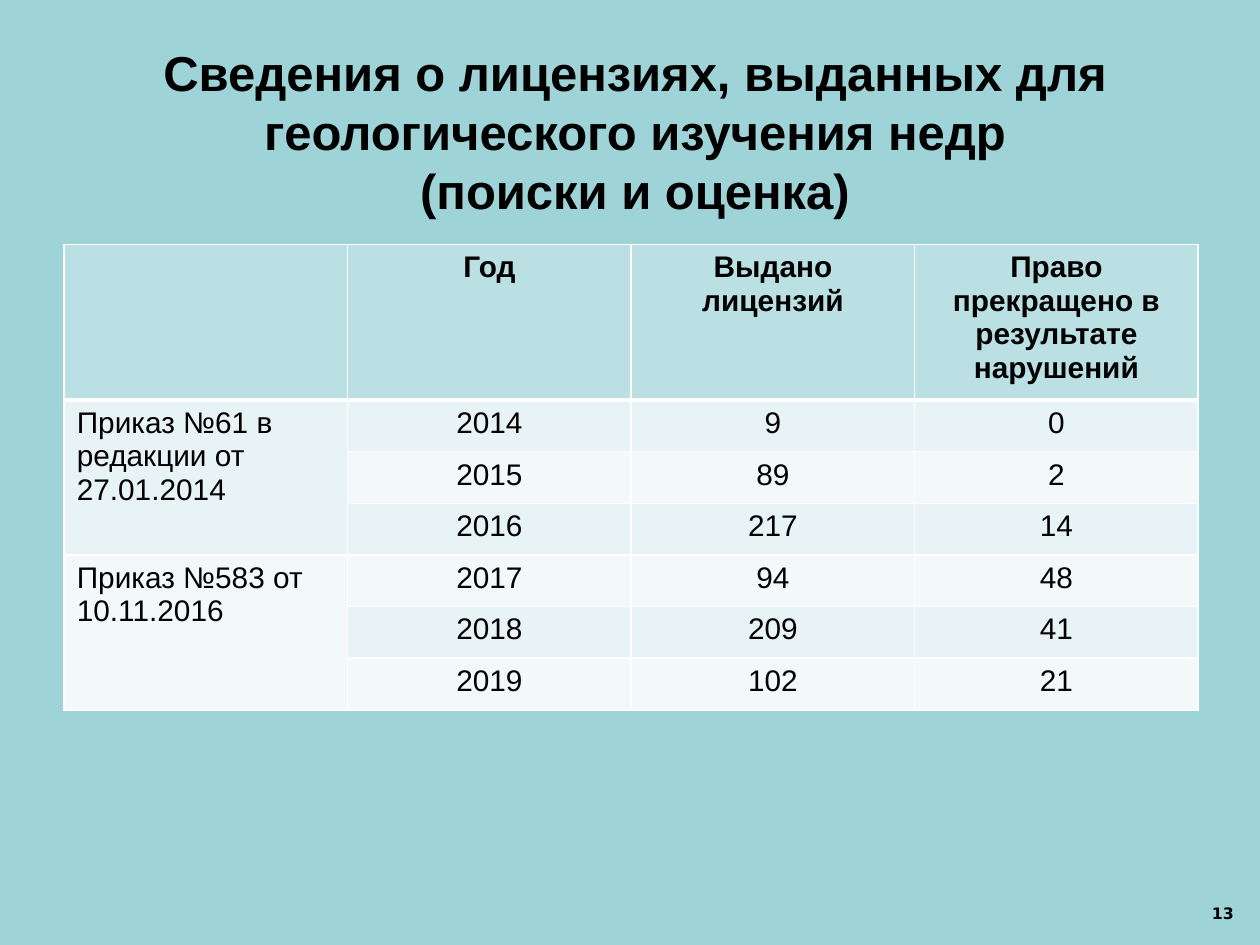
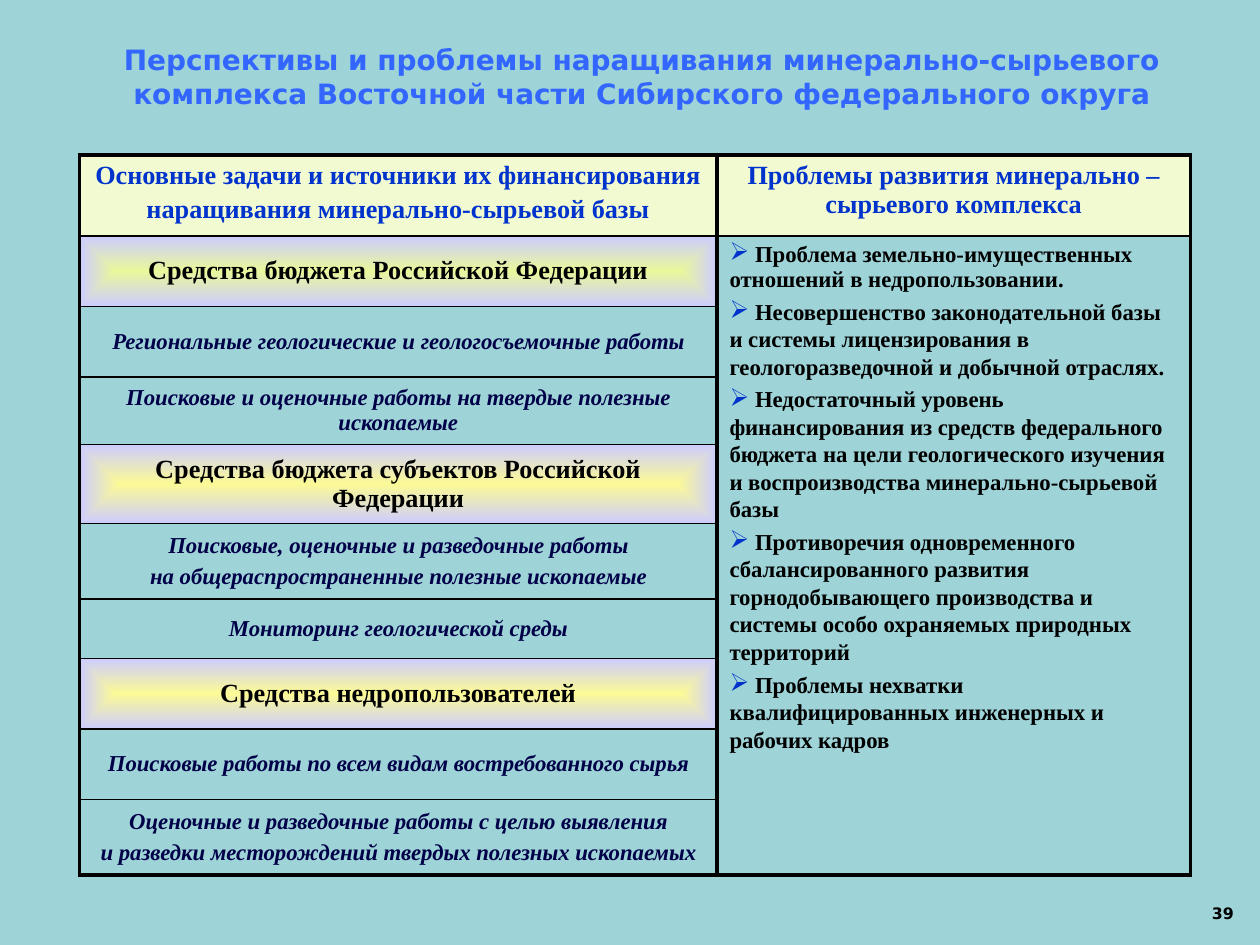
import lxml.etree
import pptx
import pptx.dml.color
import pptx.enum.text
import pptx.oxml.ns
import pptx.util

Inches = pptx.util.Inches
Pt = pptx.util.Pt
qn = pptx.oxml.ns.qn
ALIGN = pptx.enum.text.PP_ALIGN
ANCHOR = pptx.enum.text.MSO_ANCHOR


class Theme:
    background = "9ED3D7"
    black = "000000"
    white = "FFFFFF"
    header_fill = "BBE0E3"
    band_fills = ("E7F3F4", "F3F9FA")
    title_blue = "3366FF"
    heading_blue = "0033CC"
    heading_fill = "F2FAD2"
    task_navy = "000048"
    glow_edge = "CCCCFF"
    sans = "Arial"
    wide = "DejaVu Sans"
    serif = "Times New Roman"
    number_size = 9
    task_size = 13
    heading_size = 15
    small_title_size = 16
    licence_size = 17
    large_title_size = 28
    thin, medium, thick = 1, 2.25, 3


def write_text(frame, lines, font, size, color, bold=True, italic=False,
               align=ALIGN.CENTER, before=0, spacing=None, bullet=None):
    frame.word_wrap = True
    for index, line in enumerate(lines):
        para = frame.paragraphs[0] if index == 0 else frame.add_paragraph()
        para.text = line
        para.alignment = align
        para.space_before = Pt(before)
        if spacing and index:
            para.line_spacing = spacing
        if bullet:
            properties = para._p.get_or_add_pPr()
            properties.set("marL", "0")
            properties.set("indent", "0")
            bullet_color = lxml.etree.SubElement(properties, qn("a:buClr"))
            lxml.etree.SubElement(bullet_color, qn("a:srgbClr"), val=Theme.heading_blue)
            lxml.etree.SubElement(properties, qn("a:buSzPct"), val="110000")
            lxml.etree.SubElement(properties, qn("a:buChar"), char=bullet)
        para.font.name = font
        para.font.size = Pt(size)
        para.font.bold = bold
        para.font.italic = italic
        para.font.color.rgb = pptx.dml.color.RGBColor.from_string(color)


def style_cell(cell, line_color, widths, fill=None, glow=None):
    """Widths run left, right, top, bottom; glow is the centre of a gradient."""
    properties = cell._tc.get_or_add_tcPr()
    for side, width in zip("LRTB", widths):
        line = lxml.etree.SubElement(properties, qn("a:ln" + side), w=str(Pt(width)))
        solid = lxml.etree.SubElement(line, qn("a:solidFill"))
        lxml.etree.SubElement(solid, qn("a:srgbClr"), val=line_color)
    if glow:
        gradient = lxml.etree.SubElement(properties, qn("a:gradFill"), rotWithShape="1")
        stops = lxml.etree.SubElement(gradient, qn("a:gsLst"))
        for position, color in (("0", glow), ("100000", Theme.glow_edge)):
            stop = lxml.etree.SubElement(stops, qn("a:gs"), pos=position)
            lxml.etree.SubElement(stop, qn("a:srgbClr"), val=color)
        shade = lxml.etree.SubElement(gradient, qn("a:path"), path="shape")
        lxml.etree.SubElement(shade, qn("a:fillToRect"),
                              dict.fromkeys("ltrb", "50000"))
    elif fill:
        cell.fill.solid()
        cell.fill.fore_color.rgb = pptx.dml.color.RGBColor.from_string(fill)
    else:
        cell.fill.background()


deck = pptx.Presentation()
deck.slide_width = Inches(10)
deck.slide_height = Inches(7.5)

# Shared frame: background, title, page number and an empty table
page_plans = [
    dict(number="13", title_at=(0.59, 0.29, 8.9, 1.51), anchor=ANCHOR.TOP,
         title=["Сведения о лицензиях, выданных для геологического изучения недр",
                "(поиски и оценка)"],
         title_style=(Theme.sans, Theme.large_title_size, Theme.black),
         table_at=(0.51, 1.94), columns=[2.25] * 4, rows=[1.22] + [0.41] * 6),
    dict(number="39", title_at=(0.19, 0.13, 9.81, 0.95), anchor=ANCHOR.MIDDLE,
         title=["Перспективы и проблемы наращивания минерально-сырьевого комплекса "
                "Восточной части Сибирского федерального округа"],
         title_style=(Theme.wide, Theme.small_title_size, Theme.title_blue),
         table_at=(0.63, 1.23), columns=[5.06, 3.76],
         rows=[0.6, 0.56, 0.56, 0.53, 0.63, 0.6, 0.47, 0.56, 0.56, 0.6]),
]
tables = []
for plan in page_plans:
    page = deck.slides.add_slide(deck.slide_layouts[6])
    page.background.fill.solid()
    page.background.fill.fore_color.rgb = pptx.dml.color.RGBColor.from_string(
        Theme.background)

    title_box = page.shapes.add_textbox(*map(Inches, plan["title_at"]))
    title_box.text_frame.vertical_anchor = plan["anchor"]
    write_text(title_box.text_frame, plan["title"], *plan["title_style"])

    number_box = page.shapes.add_textbox(*map(Inches, (9.52, 7.12, 0.48, 0.24)))
    write_text(number_box.text_frame, [plan["number"]], Theme.wide,
               Theme.number_size, Theme.black, align=ALIGN.LEFT)

    columns, rows = plan["columns"], plan["rows"]
    table = page.shapes.add_table(
        len(rows), len(columns), *map(Inches, plan["table_at"]),
        Inches(sum(columns)), Inches(sum(rows))).table
    table.first_row = False
    table.horz_banding = False
    for column, width in zip(table.columns, columns):
        column.width = Inches(width)
    for row, height in zip(table.rows, rows):
        row.height = Inches(height)
    tables.append(table)

licence_table, tasks_table = tables

# Licences by year, grouped by order
licence_rows = [
    ["", "Год", "Выдано лицензий", "Право прекращено в результате нарушений"],
    ["Приказ №61 в редакции от 27.01.2014", "2014", "9", "0"],
    ["", "2015", "89", "2"],
    ["", "2016", "217", "14"],
    ["Приказ №583 от 10.11.2016", "2017", "94", "48"],
    ["", "2018", "209", "41"],
    ["", "2019", "102", "21"],
]
for row_index, values in enumerate(licence_rows):
    is_header = row_index == 0
    fill = Theme.header_fill if is_header else Theme.band_fills[(row_index - 1) % 2]
    top = Theme.thick if row_index == 1 else Theme.thin
    bottom = Theme.thick if is_header else Theme.thin
    for column_index, value in enumerate(values):
        cell = licence_table.cell(row_index, column_index)
        style_cell(cell, Theme.white, (Theme.thin, Theme.thin, top, bottom), fill)
        if value:
            write_text(cell.text_frame, [value], Theme.sans, Theme.licence_size,
                       Theme.black, bold=is_header,
                       align=ALIGN.CENTER if column_index else ALIGN.LEFT)
for first in (1, 4):
    licence_table.cell(first, 0).merge(licence_table.cell(first + 2, 0))

# Column headings, funding sources (with a glow colour) and their tasks
headings = [
    ["Основные задачи и источники их финансирования",
     "наращивания минерально-сырьевой базы"],
    ["Проблемы развития минерально – сырьевого комплекса"],
]
funding_rows = [
    ("EAF79B", ["Средства бюджета Российской Федерации"]),
    (None, ["Региональные геологические и геологосъемочные работы"]),
    (None, ["Поисковые и оценочные работы на твердые полезные ископаемые"]),
    ("FCFA96", ["Средства бюджета субъектов Российской Федерации"]),
    (None, ["Поисковые, оценочные и разведочные работы",
            "на общераспространенные полезные ископаемые"]),
    (None, ["Мониторинг геологической среды"]),
    ("FCFA96", ["Средства недропользователей"]),
    (None, ["Поисковые работы по всем видам востребованного сырья"]),
    (None, ["Оценочные и разведочные работы с целью выявления",
            "и разведки месторождений твердых полезных ископаемых"]),
]
problems = [
    " Проблема земельно-имущественных отношений в недропользовании.",
    " Несовершенство законодательной базы и системы лицензирования в "
    "геологоразведочной и добычной отраслях.",
    " Недостаточный уровень финансирования из средств федерального бюджета на цели "
    "геологического изучения и воспроизводства минерально-сырьевой базы",
    " Противоречия одновременного сбалансированного развития горнодобывающего "
    "производства и системы особо охраняемых природных территорий",
    " Проблемы нехватки квалифицированных инженерных и рабочих кадров",
]
sides = (Theme.medium, Theme.medium)
for column_index, lines in enumerate(headings):
    cell = tasks_table.cell(0, column_index)
    style_cell(cell, Theme.black, sides + (Theme.medium, Theme.thin),
               Theme.heading_fill)
    write_text(cell.text_frame, lines, Theme.serif, Theme.heading_size,
               Theme.heading_blue, before=3)

for row_index, (glow, lines) in enumerate(funding_rows, start=1):
    bottom = Theme.medium if row_index == len(funding_rows) else Theme.thin
    task_cell = tasks_table.cell(row_index, 0)
    style_cell(task_cell, Theme.black, sides + (Theme.thin, bottom), glow=glow)
    style_cell(tasks_table.cell(row_index, 1), Theme.black,
               sides + (Theme.thin, Theme.medium))
    task_cell.vertical_anchor = ANCHOR.MIDDLE
    write_text(task_cell.text_frame, lines, Theme.serif,
               Theme.heading_size if glow else Theme.task_size,
               Theme.black if glow else Theme.task_navy,
               italic=not glow, before=3)

# Problems fill the right column below its heading
problems_cell = tasks_table.cell(1, 1)
problems_cell.merge(tasks_table.cell(len(funding_rows), 1))
write_text(problems_cell.text_frame, problems, Theme.serif, Theme.task_size,
           Theme.black, align=ALIGN.LEFT, before=3, spacing=1.1, bullet="➢")

deck.save("out.pptx")
